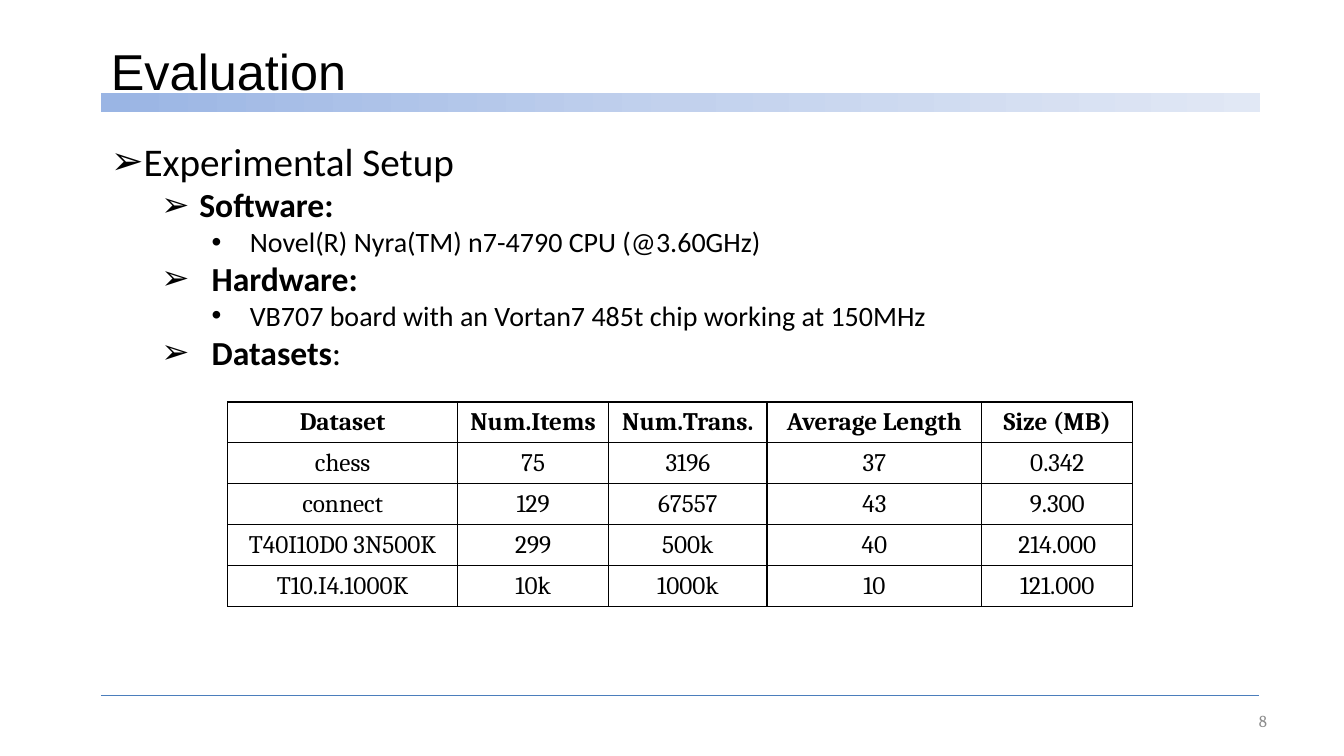
from dataclasses import dataclass

import copy
import lxml.etree
import pptx
import pptx.dml.color
import pptx.enum.shapes
import pptx.enum.text
import pptx.oxml.ns
import pptx.util

Cm = pptx.util.Cm
Pt = pptx.util.Pt
qn = pptx.oxml.ns.qn
ALIGN = pptx.enum.text.PP_ALIGN
ANCHOR = pptx.enum.text.MSO_ANCHOR

COLORS = {
    "text": "000000",
    "page_number": "8C8C8C",
    "footer_rule": "4B7EBC",
    "bar_start": "9AB5E4",
    "bar_middle": "C2D1ED",
    "bar_end": "E1E8F5",
}
LEFT = 2.54
RIGHT = 31.72
ROW_HEIGHT = 1.03
SIZES = (28, 24, 20)
BULLETS = ("➢", "➢", "•")


@dataclass
class Span:
    text: str
    bold: bool = False


@dataclass
class Item:
    level: int
    margin: float
    hanging: float
    spans: list[Span]


@dataclass
class Column:
    width: float
    heading: str
    values: list[str]


ITEMS = [
    Item(0, 0, 0, [Span("Experimental Setup")]),
    Item(1, 2.23, 0.96, [Span("Software:", True)]),
    Item(2, 3.5, 0.96, [Span("Novel(R) Nyra(TM) n7-4790 CPU (@3.60GHz)")]),
    Item(1, 2.54, 1.27, [Span("Hardware:", True)]),
    Item(2, 3.5, 0.96, [Span("VB707 board with an Vortan7 485t chip working at 150MHz")]),
    Item(1, 2.54, 1.27, [Span("Datasets", True), Span(":")]),
]

COLUMNS = [
    Column(5.79, "Dataset", ["chess", "connect", "T40I10D0 3N500K", "T10.I4.1000K"]),
    Column(3.81, "Num.Items", ["75", "129", "299", "10k"]),
    Column(3.99, "Num.Trans.", ["3196", "67557", "500k", "1000k"]),
    Column(5.41, "Average Length", ["37", "43", "40", "10"]),
    Column(3.81, "Size (MB)", ["0.342", "9.300", "214.000", "121.000"]),
]


def rgb(name: str) -> pptx.dml.color.RGBColor:
    return pptx.dml.color.RGBColor.from_string(COLORS[name])


def add_run(paragraph, text: str, size: float, font: str, bold: bool = False,
            color: str = "text") -> None:
    run = paragraph.add_run()
    run.text = text
    run.font.size = Pt(size)
    run.font.name = font
    run.font.bold = bold
    run.font.color.rgb = rgb(color)


def place(shape, left: float, top: float, width: float, height: float) -> None:
    shape.left, shape.top = Cm(left), Cm(top)
    shape.width, shape.height = Cm(width), Cm(height)


def add_title_bar(slide):
    bar = slide.shapes.add_shape(
        pptx.enum.shapes.MSO_SHAPE.RECTANGLE, Cm(LEFT), Cm(2.34), Cm(29.21), Cm(0.48))
    bar.shadow.inherit = False
    bar.line.fill.background()
    bar.fill.gradient()
    bar.fill.gradient_angle = 0
    stop_list = next(bar.element.iter(qn("a:gsLst")))
    stop_list.insert(1, copy.deepcopy(stop_list[0]))
    names = ("bar_start", "bar_middle", "bar_end")
    for index, (stop, name) in enumerate(zip(bar.fill.gradient_stops, names)):
        stop.position = index / 2
        stop.color.rgb = rgb(name)
    return bar


def add_footer_rule(slide):
    rule = slide.shapes.add_connector(
        pptx.enum.shapes.MSO_CONNECTOR.STRAIGHT, Cm(LEFT), Cm(17.53), Cm(RIGHT), Cm(17.53))
    rule.line.color.rgb = rgb("footer_rule")
    rule.line.width = Pt(0.75)
    properties = rule.element.find(qn("p:spPr"))
    lxml.etree.SubElement(properties, qn("a:effectLst"))
    return rule


def add_page_number(slide) -> None:
    box = slide.shapes.add_textbox(Cm(24.28), Cm(17.65), Cm(7.9), Cm(1.02))
    frame = box.text_frame
    frame.word_wrap = True
    frame.vertical_anchor = ANCHOR.MIDDLE
    paragraph = frame.paragraphs[0]
    paragraph.alignment = ALIGN.RIGHT
    add_run(paragraph, "8", 12, "Cambria", color="page_number")


def fill_title(title) -> None:
    place(title, LEFT, 0.86, 29.21, 1.8)
    frame = title.text_frame
    frame.auto_size = pptx.enum.text.MSO_AUTO_SIZE.NONE
    frame.vertical_anchor = ANCHOR.BOTTOM
    paragraph = frame.paragraphs[0]
    paragraph.alignment = ALIGN.LEFT
    add_run(paragraph, "Evaluation", 36, "Arial")


def fill_body(body, items: list[Item]) -> None:
    place(body, LEFT, 3.33, 30, 6.25)
    frame = body.text_frame
    frame.auto_size = pptx.enum.text.MSO_AUTO_SIZE.SHAPE_TO_FIT_TEXT
    frame.vertical_anchor = ANCHOR.TOP
    for index, item in enumerate(items):
        paragraph = frame.add_paragraph() if index else frame.paragraphs[0]
        paragraph.level = item.level
        paragraph.alignment = ALIGN.LEFT
        paragraph.line_spacing = 1.0
        paragraph.space_before = paragraph.space_after = Pt(0)
        properties = paragraph._p.get_or_add_pPr()
        properties.set("marL", str(Cm(item.margin)))
        properties.set("indent", str(-Cm(item.hanging)))
        lxml.etree.SubElement(properties, qn("a:buFont"), typeface="Arial")
        lxml.etree.SubElement(properties, qn("a:buChar"), char=BULLETS[item.level])
        for span in item.spans:
            add_run(paragraph, span.text, SIZES[item.level], "Calibri", span.bold)


def set_borders(cell) -> None:
    properties = cell._tc.get_or_add_tcPr()
    for index, side in enumerate(("a:lnL", "a:lnR", "a:lnT", "a:lnB")):
        border = lxml.etree.Element(qn(side), w=str(Pt(1)))
        fill = lxml.etree.SubElement(border, qn("a:solidFill"))
        lxml.etree.SubElement(fill, qn("a:srgbClr"), val=COLORS["text"])
        properties.insert(index, border)


def add_dataset_table(slide, columns: list[Column]) -> None:
    row_count = len(columns[0].values) + 1
    width = sum(column.width for column in columns)
    table = slide.shapes.add_table(
        row_count, len(columns), Cm(5.74), Cm(10.13),
        Cm(width), Cm(ROW_HEIGHT * row_count)).table
    table.first_row = False
    table.horz_banding = False
    for row in table.rows:
        row.height = Cm(ROW_HEIGHT)
    for column_index, column in enumerate(columns):
        table.columns[column_index].width = Cm(column.width)
        for row_index, text in enumerate([column.heading, *column.values]):
            cell = table.cell(row_index, column_index)
            cell.fill.background()
            cell.vertical_anchor = ANCHOR.MIDDLE
            set_borders(cell)
            paragraph = cell.text_frame.paragraphs[0]
            paragraph.alignment = ALIGN.CENTER
            add_run(paragraph, text, 18, "Cambria", bold=row_index == 0)


def main() -> None:
    presentation = pptx.Presentation()
    presentation.slide_width = Cm(33.87)
    presentation.slide_height = Cm(19.05)
    slide = presentation.slides.add_slide(presentation.slide_layouts[1])
    title = slide.shapes.title
    for backdrop in (add_title_bar(slide), add_footer_rule(slide)):
        title.element.addprevious(backdrop.element)
    fill_title(title)
    fill_body(slide.placeholders[1], ITEMS)
    add_dataset_table(slide, COLUMNS)
    add_page_number(slide)
    presentation.save("out.pptx")


if __name__ == "__main__":
    main()
